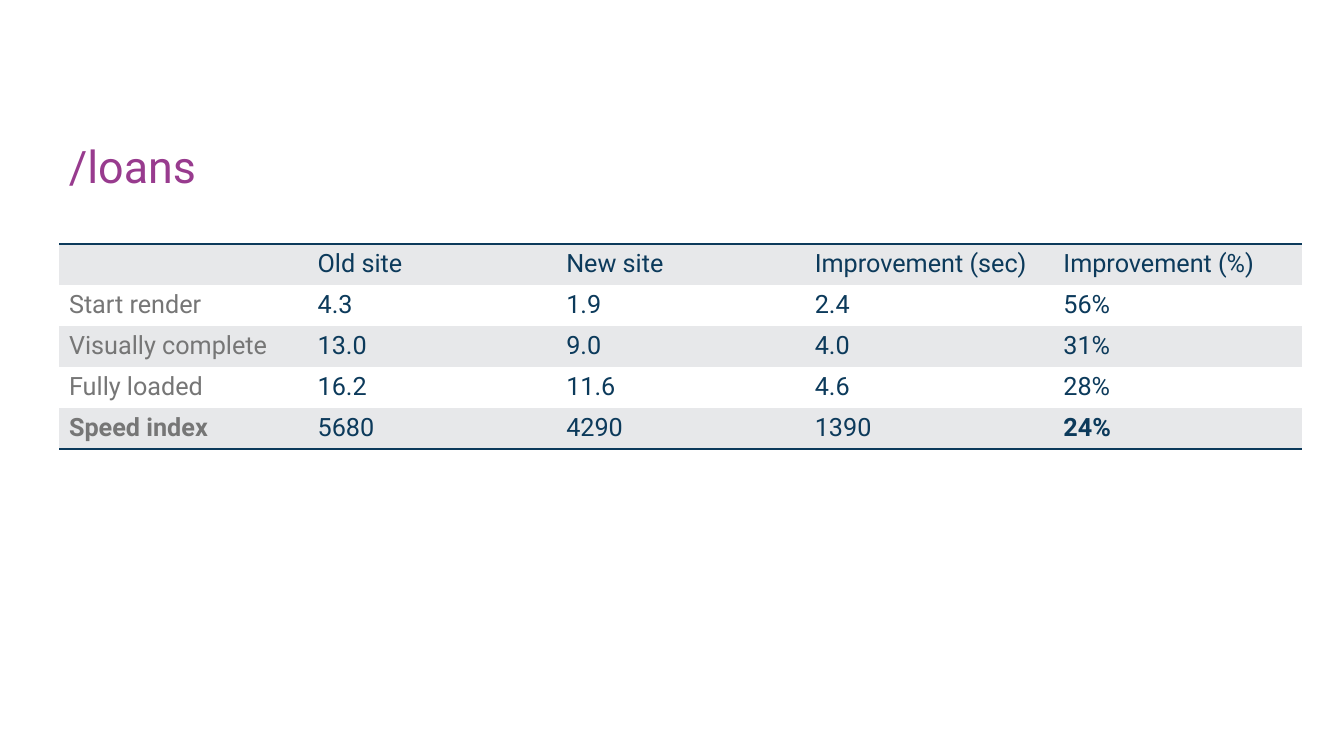
from lxml.etree import SubElement
from pptx import Presentation
from pptx.dml.color import RGBColor
from pptx.enum.text import MSO_ANCHOR
from pptx.oxml import parse_xml
from pptx.oxml.ns import nsdecls, qn
from pptx.util import Pt

PX = 914400 / 100.8
FONT = "Roboto"
PURPLE = RGBColor(0x98, 0x3B, 0x8E)
NAVY = RGBColor(0x0C, 0x3A, 0x5B)
GREY = RGBColor(0x76, 0x76, 0x76)
BAND = RGBColor(0xE7, 0xE8, 0xEA)
WHITE = RGBColor(0xFF, 0xFF, 0xFF)
NO_STYLE = "{2D5ABB26-0587-4C30-8999-92F81FD0307C}"

ROWS = [
    ["", "Old site", "New site", "Improvement (sec)", "Improvement (%)"],
    ["Start render", "4.3", "1.9", "2.4", "56%"],
    ["Visually complete", "13.0", "9.0", "4.0", "31%"],
    ["Fully loaded", "16.2", "11.6", "4.6", "28%"],
    ["Speed index", "5680", "4290", "1390", "24%"],
]
BOLD = {"Speed index", "24%"}


def px(n):
    return round(n * PX)


def add_run(p, text, size, color, bold=False):
    r = p.add_run()
    r.text = text
    r.font.name = FONT
    r.font.size = Pt(size)
    r.font.bold = bold
    r.font.color.rgb = color


def add_border(cell, side):
    ln = parse_xml(
        f'<a:{side} {nsdecls("a")} w="{Pt(2)}"><a:solidFill>'
        f'<a:srgbClr val="{NAVY}"/></a:solidFill></a:{side}>'
    )
    cell._tc.get_or_add_tcPr().insert(0, ln)


def add_title(s, x, y, w, h):
    tf = s.shapes.add_textbox(px(x), px(y), px(w), px(h)).text_frame
    tf.word_wrap = True
    tf.vertical_anchor = MSO_ANCHOR.BOTTOM
    p = tf.paragraphs[0]
    p.line_spacing = 0.9
    add_run(p, "/loans", 32, PURPLE)


def add_results(s, x, y, w, h):
    frame = s.shapes.add_table(len(ROWS), len(ROWS[0]), px(x), px(y), px(w), px(h))
    table = frame.table
    table.first_row = False
    table.horz_banding = False
    props = table._tbl.tblPr
    style = props.find(qn("a:tableStyleId"))
    if style is None:
        style = SubElement(props, qn("a:tableStyleId"))
    style.text = NO_STYLE
    for i, values in enumerate(ROWS):
        for j, value in enumerate(values):
            cell = table.cell(i, j)
            cell.fill.solid()
            cell.fill.fore_color.rgb = WHITE if i % 2 else BAND
            if value:
                color = NAVY if j else GREY
                add_run(cell.text_frame.paragraphs[0], value, 18, color, value in BOLD)
            if i == 0:
                add_border(cell, "lnT")
            if i == len(ROWS) - 1:
                add_border(cell, "lnB")


def main():
    prs = Presentation()
    prs.slide_width, prs.slide_height = px(1344), px(756)
    s = prs.slides.add_slide(prs.slide_layouts[6])
    add_title(s, 59, 126, 1243, 72)
    add_results(s, 59, 244, 1243, 205)
    prs.save("out.pptx")


if __name__ == "__main__":
    main()
